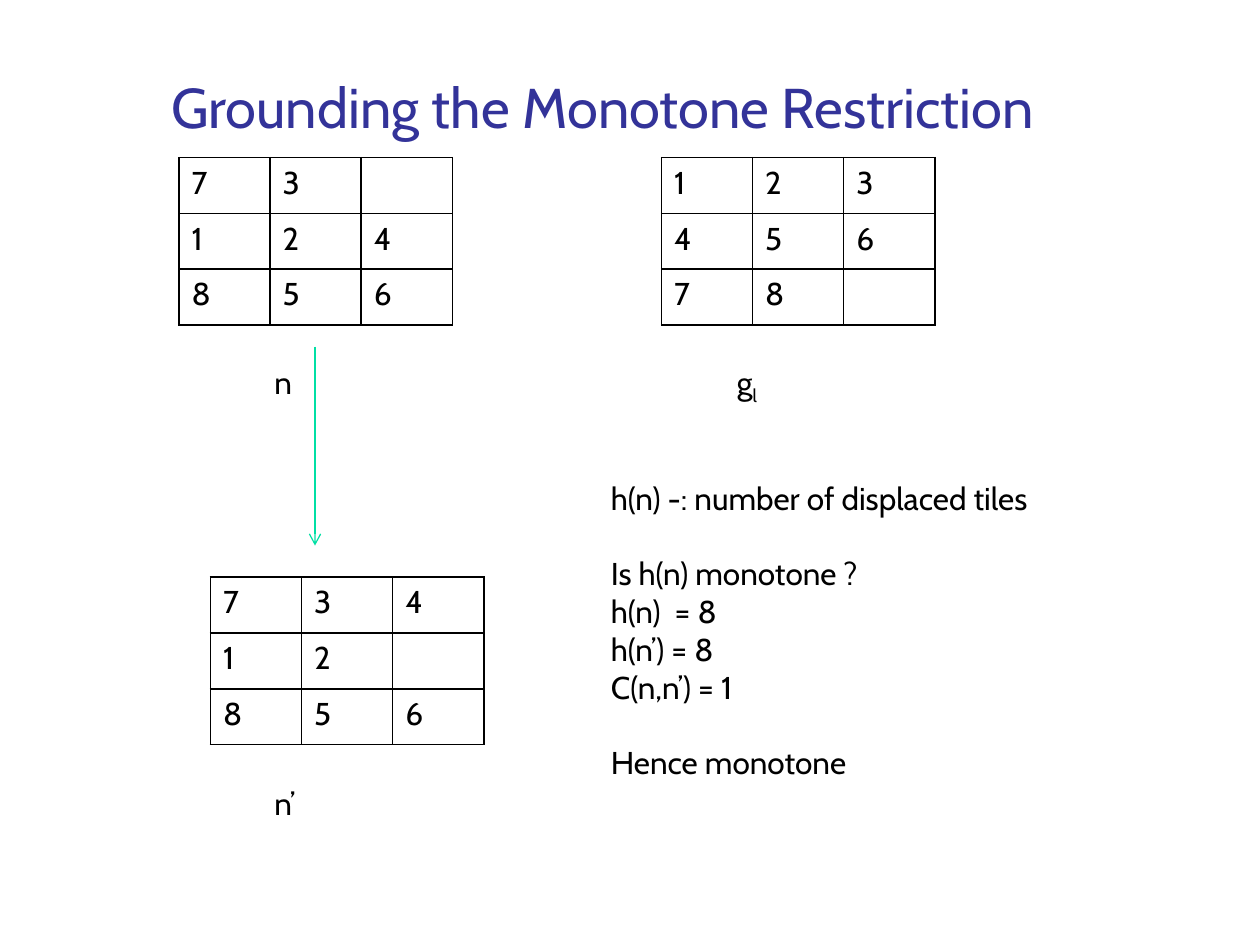
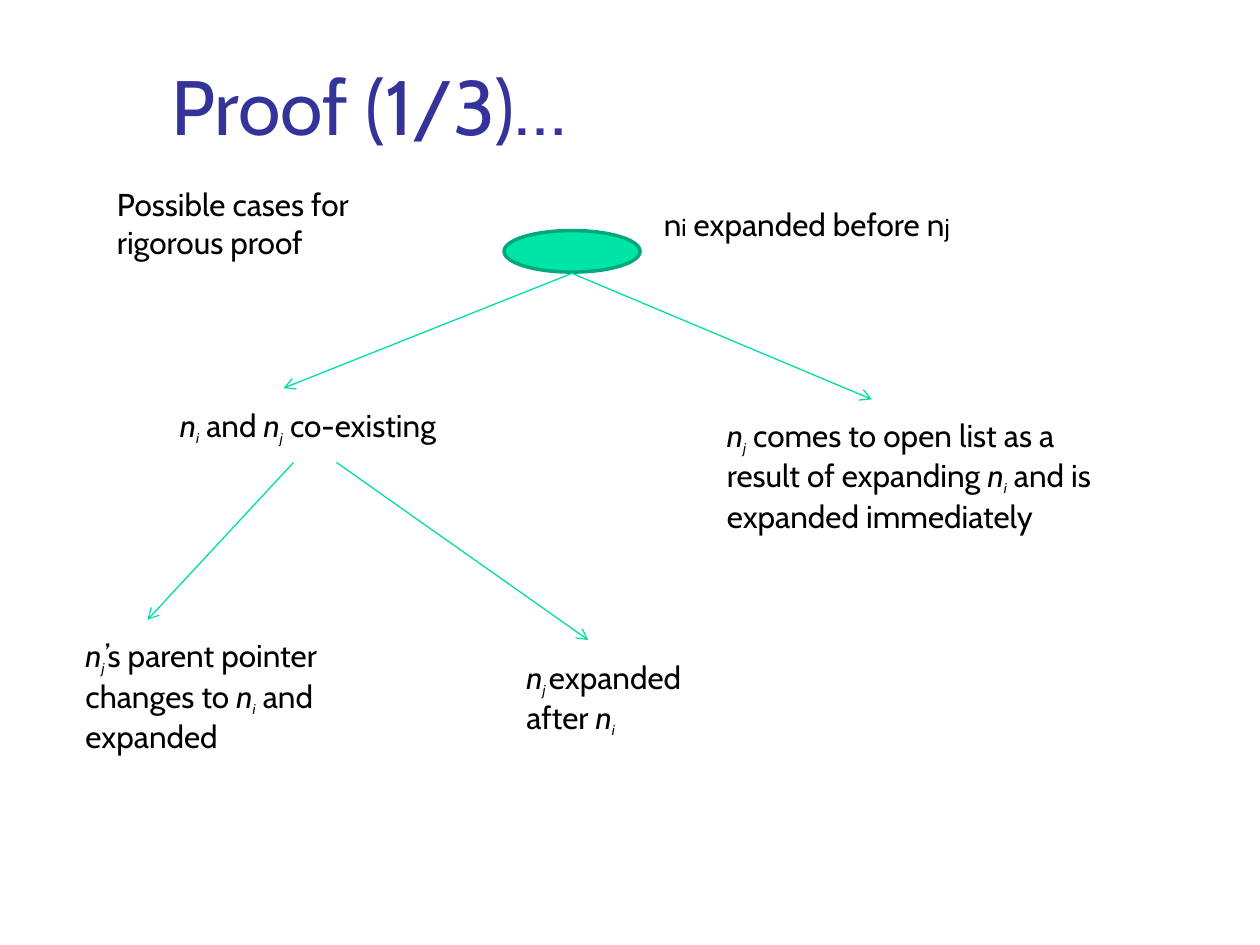
from typing import NamedTuple

from lxml import etree
from pptx import Presentation
from pptx import util as u
from pptx.dml.color import RGBColor
from pptx.enum import shapes, text
from pptx.oxml.ns import qn

FONT = "Cabin"
BLACK, TITLE, LINE = "000000", "333399", "00DFA4"
NODE_FILL, NODE_LINE = "00E4A8", "00A97C"
BODY_SIZE, SUB_SIZE = 18, 14
BLANK_LINE = 21.6
CELL_W, CELL_H = 2.17 / 3, 1.33 / 3


class Run(NamedTuple):
    text: str
    size: float = BODY_SIZE
    italic: bool = False
    baseline: int = 0


class Line(NamedTuple):
    runs: list[Run]
    space_after: float = 0


class Label(NamedTuple):
    x: float
    y: float
    w: float
    h: float
    lines: list[Line]


class Puzzle(NamedTuple):
    x: float
    y: float
    tiles: str


class Arrow(NamedTuple):
    x1: float
    y1: float
    x2: float
    y2: float


def rgb(color: str) -> RGBColor:
    return RGBColor.from_string(color)


def plain(content: str, space_after: float = 0) -> Line:
    return Line([Run(content)], space_after)


def node(index: str) -> list[Run]:
    return [Run("n", italic=True), Run(index, SUB_SIZE, True, -25)]


def style(font, size: float, color: str) -> None:
    font.name = FONT
    font.size = u.Pt(size)
    font.color.rgb = rgb(color)


def add_box(slide, x: float, y: float, w: float, h: float):
    sp = slide.shapes.add_textbox(u.Inches(x), u.Inches(y), u.Inches(w), u.Inches(h))
    sp.text_frame.word_wrap = True
    return sp.text_frame


def add_title(slide, content: str, size: float, h: float) -> None:
    tf = add_box(slide, 1.26, 0.23, 8.52, h)
    tf.vertical_anchor = text.MSO_ANCHOR.BOTTOM
    p = tf.paragraphs[0]
    p.text = content
    style(p.font, size, TITLE)


def add_label(slide, label: Label) -> None:
    tf = add_box(slide, label.x, label.y, label.w, label.h)
    for i, line in enumerate(label.lines):
        p = tf.add_paragraph() if i else tf.paragraphs[0]
        p.space_after = u.Pt(line.space_after)
        style(p.font, BODY_SIZE, BLACK)
        for run in line.runs:
            r = p.add_run()
            r.text = run.text
            style(r.font, run.size, BLACK)
            if run.italic:
                r.font.italic = True
            if run.baseline:
                r._r.get_or_add_rPr().set("baseline", str(run.baseline * 1000))


def add_borders(cell) -> None:
    tc_pr = cell._tc.get_or_add_tcPr()
    for i, side in enumerate(("lnL", "lnR", "lnT", "lnB")):
        ln = etree.Element(qn(f"a:{side}"), w=str(u.Pt(1)))
        fill = etree.SubElement(ln, qn("a:solidFill"))
        etree.SubElement(fill, qn("a:srgbClr"), val=BLACK)
        tc_pr.insert(i, ln)


def add_puzzle(slide, puzzle: Puzzle) -> None:
    table = slide.shapes.add_table(
        3, 3, u.Inches(puzzle.x), u.Inches(puzzle.y),
        u.Inches(3 * CELL_W), u.Inches(3 * CELL_H)).table
    table.first_row = table.horz_banding = False
    for column in table.columns:
        column.width = u.Inches(CELL_W)
    for row in table.rows:
        row.height = u.Inches(CELL_H)
    for cell, tile in zip(table.iter_cells(), puzzle.tiles):
        cell.fill.background()
        add_borders(cell)
        p = cell.text_frame.paragraphs[0]
        p.text = tile.strip()
        style(p.font, BODY_SIZE, BLACK)


def add_arrow(slide, arrow: Arrow) -> None:
    line = slide.shapes.add_connector(
        shapes.MSO_CONNECTOR.STRAIGHT, *(u.Inches(v) for v in arrow))
    line.line.color.rgb = rgb(LINE)
    line.line.width = u.Pt(0.75)
    etree.SubElement(line.line._get_or_add_ln(), qn("a:tailEnd"), type="arrow")
    etree.SubElement(line._element.spPr, qn("a:effectLst"))


def add_root(slide, x: float, y: float, w: float, h: float) -> None:
    sp = slide.shapes.add_shape(
        shapes.MSO_SHAPE.OVAL, u.Inches(x), u.Inches(y), u.Inches(w), u.Inches(h))
    sp.shadow.inherit = False
    sp.fill.solid()
    sp.fill.fore_color.rgb = rgb(NODE_FILL)
    sp.line.color.rgb = rgb(NODE_LINE)
    sp.line.width = u.Pt(2)


PUZZLES = [
    Puzzle(1.42, 1.25, "73 124856"),
    Puzzle(5.25, 1.25, "12345678 "),
    Puzzle(1.67, 4.58, "73412 856"),
]

PUZZLE_LABELS = [
    Label(2.08, 2.83, 0.42, 0.4, [plain("n")]),
    Label(5.75, 2.83, 0.5, 0.4, [Line([Run("g"), Run("l", baseline=-25)])]),
    Label(2.08, 6.17, 0.58, 0.42, [plain("n’")]),
    Label(4.75, 3.75, 3.83, 2.52, [
        plain("h(n) -: number of displaced tiles", BLANK_LINE),
        plain("Is h(n) monotone ?"),
        plain("h(n)  = 8"),
        plain("h(n’) = 8"),
        plain("C(n,n’) = 1", BLANK_LINE),
        plain("Hence monotone"),
    ]),
]

CASE_LABELS = [
    Label(0.83, 1.42, 2.08, 0.71, [plain("Possible cases for rigorous proof")]),
    Label(5.17, 1.58, 2.67, 0.4, [Line([
        Run("n"), Run("i", SUB_SIZE), Run(" expanded before n"), Run("j", SUB_SIZE)])]),
    Label(1.33, 3.17, 2.42, 0.4, [Line([
        *node("i"), Run(" and "), *node("j"), Run(" co-existing")])]),
    Label(5.67, 3.25, 3.42, 1.01, [Line([
        *node("j"), Run(" comes to open list as a result of expanding "),
        *node("i"), Run(" and is expanded immediately")])]),
    Label(0.58, 5, 2.25, 1.01, [Line([
        *node("j"), Run("’s parent pointer changes to "),
        *node("i"), Run(" and expanded")])]),
    Label(4.08, 5.17, 1.75, 0.71, [Line([
        *node("j "), Run("expanded after "), *node("i")])]),
]

CASE_ARROWS = [
    Arrow(4.54, 2.17, 2.25, 3.08),
    Arrow(4.54, 2.17, 6.92, 3.17),
    Arrow(2.33, 3.67, 1.17, 4.92),
    Arrow(2.67, 3.67, 4.67, 5.08),
]


def build_grounding(slide) -> None:
    add_title(slide, "Grounding the Monotone Restriction", 32, 0.93)
    for puzzle in PUZZLES:
        add_puzzle(slide, puzzle)
    for label in PUZZLE_LABELS:
        add_label(slide, label)
    add_arrow(slide, Arrow(2.5, 2.75, 2.5, 4.33))


def build_proof(slide) -> None:
    add_title(slide, "Proof (1/3)…", 44, 1.02)
    add_root(slide, 4, 1.83, 1.08, 0.33)
    for label in CASE_LABELS:
        add_label(slide, label)
    for arrow in CASE_ARROWS:
        add_arrow(slide, arrow)


def main() -> None:
    prs = Presentation()
    prs.slide_width, prs.slide_height = u.Inches(10), u.Inches(7.5)
    for build in (build_grounding, build_proof):
        build(prs.slides.add_slide(prs.slide_layouts[6]))
    prs.save("out.pptx")


if __name__ == "__main__":
    main()
